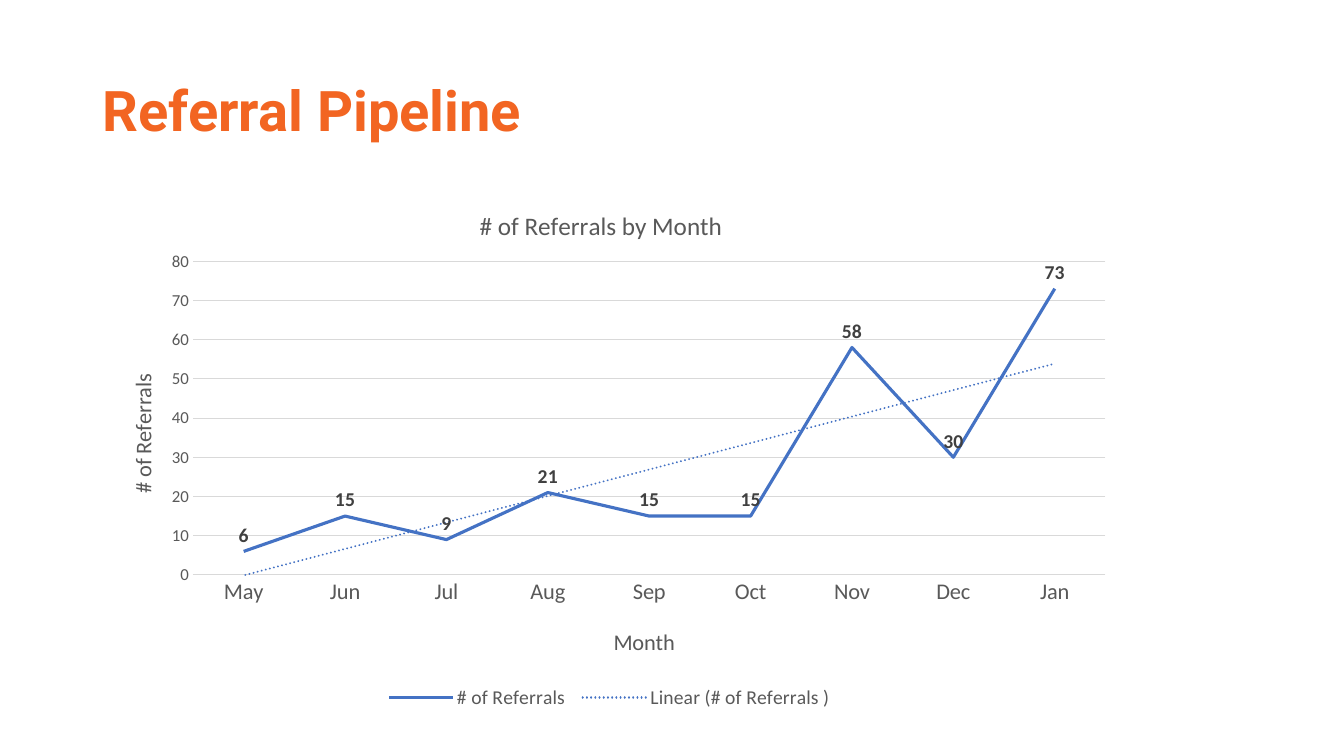
from dataclasses import dataclass

import lxml.etree
import pptx
import pptx.chart.data
import pptx.dml.color
import pptx.enum.chart
import pptx.enum.dml
import pptx.enum.text
import pptx.oxml
import pptx.oxml.ns
import pptx.util

SLIDE_W, SLIDE_H = 13.33, 7.5
NS = pptx.oxml.ns.nsdecls("c", "a")
qn = pptx.oxml.ns.qn


@dataclass(frozen=True)
class Theme:
    heading_font: str = "Roboto"
    body_font: str = "Calibri"
    accent: str = "F26522"
    series: str = "4472C4"
    text: str = "595959"
    label: str = "404040"
    grid: str = "D9D9D9"
    heading: float = 40
    chart_title: float = 18
    axis: float = 16
    legend: float = 14
    tick: float = 12


@dataclass(frozen=True)
class Box:
    """Left, top, width and height as shares of the slide."""
    x: float
    y: float
    w: float
    h: float

    def place(self, sp) -> None:
        sp.left, sp.top, sp.width, sp.height = self.emu()

    def emu(self) -> list[int]:
        return [pptx.util.Inches(v) for v in (self.x * SLIDE_W, self.y * SLIDE_H,
                                              self.w * SLIDE_W, self.h * SLIDE_H)]


@dataclass(frozen=True)
class Caption:
    """A chart or axis title; x and y are shares of the chart."""
    text: str
    size: float
    x: float
    y: float
    rotation: int = 0


THEME = Theme()
TITLE_BOX = Box(0.92 / SLIDE_W, 0.4 / SLIDE_H, 11.5 / SLIDE_W, 1.45 / SLIDE_H)
CHART_BOX = Box(0.92 / SLIDE_W, 1.75 / SLIDE_H, 10.25 / SLIDE_W, 5.33 / SLIDE_H)
REFERRALS = {"May": 6, "Jun": 15, "Jul": 9, "Aug": 21, "Sep": 15,
             "Oct": 15, "Nov": 58, "Dec": 30, "Jan": 73}


def rgb(color: str) -> pptx.dml.color.RGBColor:
    return pptx.dml.color.RGBColor.from_string(color)


def style_font(font, size: float, color: str, bold: bool = False,
               name: str = THEME.body_font) -> None:
    font.size, font.bold, font.name = pptx.util.Pt(size), bold, name
    font.color.rgb = rgb(color)


def style_line(line, color: str, width: float) -> None:
    line.color.rgb = rgb(color)
    line.width = pptx.util.Pt(width)


def make_layout(inner: bool = False, **shares: float) -> lxml.etree._Element:
    target = '<c:layoutTarget val="inner"/>' if inner else ""
    modes = "".join(f'<c:{k}Mode val="edge"/>' for k in ("x", "y"))
    values = "".join(f'<c:{k} val="{v}"/>' for k, v in shares.items())
    return pptx.oxml.parse_xml(f"<c:layout {NS}><c:manualLayout>{target}{modes}{values}"
                               "</c:manualLayout></c:layout>")


def add_caption(title, caption: Caption) -> None:
    p = title.text_frame.paragraphs[0]
    r = p.add_run()
    r.text = caption.text
    style_font(r.font, caption.size, THEME.text)
    el = title.element
    el.find(".//" + qn("a:bodyPr")).set("rot", str(caption.rotation * 60000))
    for old in el.findall(qn("c:layout")):
        el.remove(old)
    el.find(qn("c:tx")).addnext(make_layout(x=caption.x, y=caption.y))


def style_axis(axis, size: float, caption: Caption) -> None:
    axis.major_tick_mark = axis.minor_tick_mark = pptx.enum.chart.XL_TICK_MARK.NONE
    style_font(axis.tick_labels.font, size, THEME.text)
    add_caption(axis.axis_title, caption)


def add_trend(chart) -> None:
    cat = chart.element.find(".//" + qn("c:ser")).find(qn("c:cat"))
    cat.addprevious(pptx.oxml.parse_xml(
        f'<c:trendline {NS}><c:spPr><a:ln w="{pptx.util.Pt(1.5)}" cap="rnd"><a:solidFill>'
        f'<a:srgbClr val="{THEME.series}"/></a:solidFill><a:prstDash val="sysDot"/></a:ln></c:spPr>'
        '<c:trendlineType val="linear"/><c:dispRSqr val="0"/><c:dispEq val="0"/></c:trendline>'))


def add_title(s) -> None:
    sp = s.shapes.title
    TITLE_BOX.place(sp)
    tf = sp.text_frame
    tf.vertical_anchor = pptx.enum.text.MSO_ANCHOR.MIDDLE
    p = tf.paragraphs[0]
    p.alignment = pptx.enum.text.PP_ALIGN.LEFT
    p.line_spacing = 0.9
    r = p.add_run()
    r.text = "Referral Pipeline"
    style_font(r.font, THEME.heading, THEME.accent, True, THEME.heading_font)


def add_referral_chart(s) -> None:
    data = pptx.chart.data.CategoryChartData()
    data.categories = list(REFERRALS)
    data.add_series("# of Referrals ", list(REFERRALS.values()))
    chart = s.shapes.add_chart(pptx.enum.chart.XL_CHART_TYPE.LINE,
                               *CHART_BOX.emu(), data).chart
    style_font(chart.font, 10, "000000")
    add_caption(chart.chart_title, Caption("# of Referrals by Month", THEME.chart_title, 0.37, 0.05))

    # Axes
    months, counts = chart.category_axis, chart.value_axis
    style_axis(months, THEME.axis, Caption("Month", THEME.axis, 0.5, 0.83))
    style_line(months.format.line, THEME.grid, 0.75)
    style_axis(counts, THEME.tick, Caption("# of Referrals", THEME.axis, 0.03, 0.36, -90))
    counts.minimum_scale, counts.maximum_scale, counts.major_unit = 0, 80, 10
    counts.format.line.fill.background()
    style_line(counts.major_gridlines.format.line, THEME.grid, 0.75)

    # Line, value labels and trend
    plot = chart.plots[0]
    plot.vary_by_categories = False
    line = plot.series[0]
    line.smooth = False
    line.marker.style = pptx.enum.chart.XL_MARKER_STYLE.NONE
    style_line(line.format.line, THEME.series, 2.25)
    labels = line.data_labels
    labels.show_value = True
    labels.position = pptx.enum.chart.XL_LABEL_POSITION.ABOVE
    style_font(labels.font, THEME.legend, THEME.label, True)
    add_trend(chart)

    # Legend and plot area
    chart.has_legend = True
    chart.legend.position = pptx.enum.chart.XL_LEGEND_POSITION.BOTTOM
    chart.legend.include_in_layout = False
    style_font(chart.legend.font, THEME.legend, THEME.text)
    area = chart.element.find(".//" + qn("c:plotArea"))
    for old in area.findall(qn("c:layout")):
        area.remove(old)
    area.insert(0, make_layout(inner=True, x=0.097, y=0.158, w=0.883, h=0.584))


def main() -> None:
    prs = pptx.Presentation()
    prs.slide_width = pptx.util.Inches(SLIDE_W)
    prs.slide_height = pptx.util.Inches(SLIDE_H)
    s = prs.slides.add_slide(prs.slide_layouts.get_by_name("Title Only"))
    add_title(s)
    add_referral_chart(s)
    prs.save("out.pptx")


if __name__ == "__main__":
    main()
